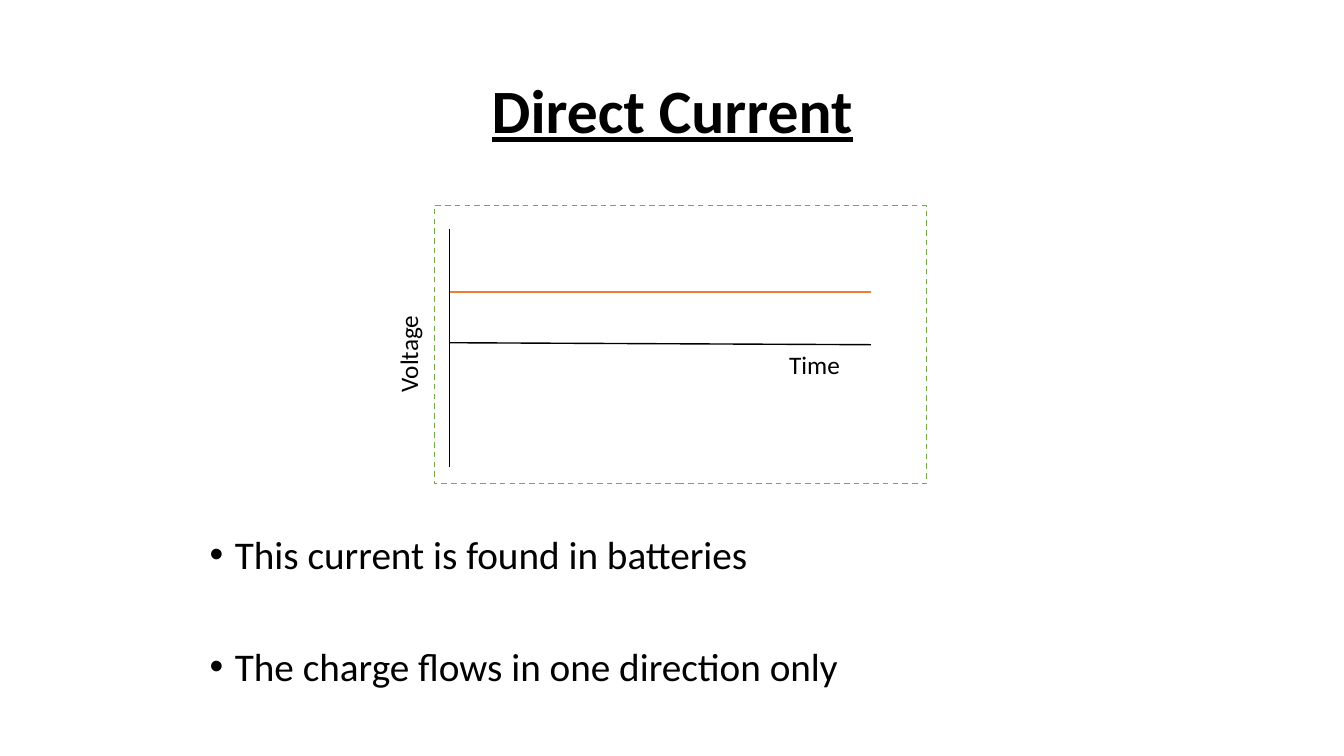
import pptx
import pptx.util
import pptx.dml.color
import pptx.enum.dml
import pptx.enum.shapes
import pptx.enum.text
import pptx.oxml.ns
import lxml.etree

THEME = {
    "font": "Calibri",
    "ink": pptx.dml.color.RGBColor.from_string("000000"),
    "signal": pptx.dml.color.RGBColor.from_string("ED7D31"),
    "frame": pptx.dml.color.RGBColor.from_string("70AD47"),
    "title": pptx.util.Pt(44),
    "body": pptx.util.Pt(28),
    "label": pptx.util.Pt(18),
}
CELL = pptx.util.Inches(0.1)


def grid(*cells):
    """Turn columns and rows of the 0.1 inch grid into lengths."""
    return [round(n * CELL) for n in cells]


def write(p, text, size, **extra):
    r = p.add_run()
    r.text = text
    r.font.color.rgb = THEME["ink"]
    for key, value in {"name": THEME["font"], "size": THEME[size], **extra}.items():
        setattr(r.font, key, value)


prs = pptx.Presentation()
prs.slide_width, prs.slide_height = grid(133.33, 75)
s = prs.slides.add_slide(prs.slide_layouts[1])
title, body = s.placeholders

# Title and list areas
for sp, box in ((title, (9.2, 4, 115, 14.5)), (body, (19.8, 52.6, 106.3, 21))):
    for side, value in zip(("left", "top", "width", "height"), grid(*box)):
        setattr(sp, side, value)
    sp.text_frame.auto_size = pptx.enum.text.MSO_AUTO_SIZE.NONE

title.text_frame.vertical_anchor = pptx.enum.text.MSO_ANCHOR.MIDDLE
p = title.text_frame.paragraphs[0]
p.alignment = pptx.enum.text.PP_ALIGN.CENTER
p.line_spacing = 0.9
write(p, "Direct Current", "title", bold=True, underline=True)

# Axes and the constant voltage
axis_x, end_x = 44.6, 86.4
for x1, y1, x2, y2, color, width in (
    (axis_x, 34, end_x, 34.2, "ink", 1),
    (axis_x, 46.3, axis_x, 22.7, "ink", 1),
    (axis_x, 29, end_x, 29, "signal", 1.5),
):
    line = s.shapes.add_connector(
        pptx.enum.shapes.MSO_CONNECTOR.STRAIGHT, *grid(x1, y1, x2, y2))
    line.line.color.rgb = THEME[color]
    line.line.width = pptx.util.Pt(width)
    lxml.etree.SubElement(line._element.spPr, pptx.oxml.ns.qn("a:effectLst"))

# Dashed frame around the graph
frame = s.shapes.add_shape(
    pptx.enum.shapes.MSO_SHAPE.RECTANGLE, *grid(43.1, 20.4, 48.8, 27.6))
frame.shadow.inherit = False
frame.fill.background()
frame.line.color.rgb = THEME["frame"]
frame.line.width = pptx.util.Pt(1)
frame.line.dash_style = pptx.enum.dml.MSO_LINE.DASH

# Axis labels
for text, left, top, rotation in (("Voltage", 34.6, 32, 270), ("Time", 77.3, 34.2, 0)):
    label = s.shapes.add_textbox(*grid(left, top, 11.8, 4))
    label.rotation = rotation
    label.text_frame.word_wrap = True
    write(label.text_frame.paragraphs[0], text, "label")

# Bullets
tf = body.text_frame
for i, (text, before) in enumerate((
    ("This current is found in batteries", 10),
    ("The charge flows in one direction only", 50),
)):
    p = tf.add_paragraph() if i else tf.paragraphs[0]
    p.line_spacing = 0.9
    p.space_before = pptx.util.Pt(before)
    indent = pptx.util.Inches(0.25)
    pPr = p._p.get_or_add_pPr()
    pPr.set("marL", str(indent))
    pPr.set("indent", str(-indent))
    write(p, text, "body")

prs.save("out.pptx")
